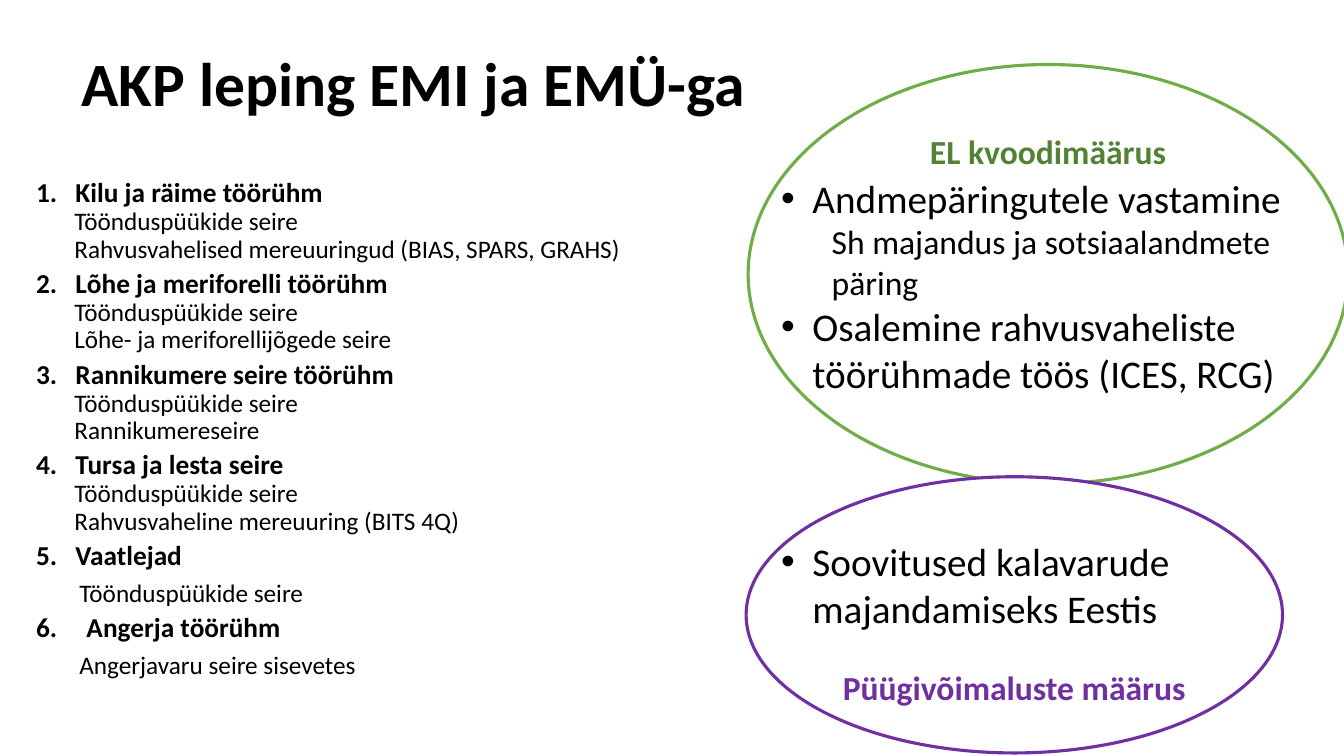
from dataclasses import dataclass

from pptx import Presentation
from pptx import util as u
from pptx.dml.color import RGBColor
from pptx.enum import shapes, text
from pptx.oxml.ns import qn
from lxml import etree


@dataclass(frozen=True)
class Theme:
    font: str = "Calibri"
    black: str = "000000"
    white: str = "FFFFFF"
    green: str = "70AD47"
    dark_green: str = "548235"
    purple: str = "7030A0"
    title: float = 44
    point: float = 28
    label: float = 24
    group: float = 19.5
    task: float = 18


T = Theme()
WIDTH, HEIGHT = 13.33, 7.5

# Work groups: heading, tasks, heading indent, task indent, space before a task
GROUPS = [
    ("Kilu ja räime töörühm",
     ["Töönduspüükide seire", "Rahvusvahelised mereuuringud (BIAS, SPARS, GRAHS)"], 0.39, 0.38, 4.6),
    ("Lõhe ja meriforelli töörühm",
     ["Töönduspüükide seire", "Lõhe- ja meriforellijõgede seire"], 0.39, 0.38, 4.6),
    ("Rannikumere seire töörühm",
     ["Töönduspüükide seire", "Rannikumereseire"], 0.39, 0.38, 4.6),
    ("Tursa ja lesta seire",
     ["Töönduspüükide seire", "Rahvusvaheline mereuuring (BITS 4Q)"], 0.39, 0.38, 4.6),
    ("Vaatlejad", ["Töönduspüükide seire"], 0.39, 0.43, 11),
    ("Angerja töörühm", ["Angerjavaru seire sisevetes"], 0.5, 0.43, 11),
]

# Duties: text, bulleted, space before
DUTIES = [
    ("Andmepäringutele vastamine", True, 0),
    ("Sh majandus ja sotsiaalandmete päring", False, 0),
    ("Osalemine rahvusvaheliste töörühmade töös (ICES, RCG)", True, 0),
    ("Soovitused kalavarude majandamiseks Eestis", True, 101),
]


def share(left, top, width, height):
    """Box in inches from percentages of the slide's size."""
    return [u.Inches(round(part * side / 100, 2))
            for part, side in zip((left, top, width, height), (WIDTH, HEIGHT) * 2)]


def style(p, size, color=T.black, bold=False):
    for r in p.runs:
        r.font.name, r.font.size, r.font.bold = T.font, u.Pt(size), bold
        r.font.color.rgb = RGBColor.from_string(color)


def indent(p, left, hanging=0):
    pPr = p._p.get_or_add_pPr()
    pPr.set("marL", str(u.Inches(left)))
    pPr.set("indent", str(-u.Inches(hanging)))
    return pPr


def mark(pPr, tag, **attributes):
    etree.SubElement(pPr, qn(tag), attributes)


def paragraphs(tf, count):
    return [tf.paragraphs[0]] + [tf.add_paragraph() for _ in range(count - 1)]


def text_box(s, box):
    tf = s.shapes.add_textbox(*box).text_frame
    tf.word_wrap = True
    return tf


def add_title(s, box, words):
    sp = s.shapes.title
    sp.left, sp.top, sp.width, sp.height = box
    tf = sp.text_frame
    tf.text = words
    tf.vertical_anchor = text.MSO_ANCHOR.MIDDLE
    p = tf.paragraphs[0]
    p.alignment, p.line_spacing = text.PP_ALIGN.LEFT, 0.9
    style(p, T.title, bold=True)


def add_groups(s, box):
    rows = []
    for number, (heading, tasks, hang, left, before) in enumerate(GROUPS, 1):
        rows.append((heading, number, hang, hang, 9))
        rows += [(task, None, left, 0, before) for task in tasks]
    tf = text_box(s, box)
    for p, (words, number, left, hang, before) in zip(paragraphs(tf, len(rows)), rows):
        p.text = words
        p.line_spacing, p.space_before = 0.7, u.Pt(before)
        pPr = indent(p, left, hang)
        if number:
            mark(pPr, "a:buFont", typeface="+mj-lt")
            mark(pPr, "a:buAutoNum", type="arabicPeriod", startAt=str(number))
        else:
            mark(pPr, "a:buNone")
        style(p, T.group if number else T.task, bold=bool(number))


def add_regulation(s, box, words, line, color, anchor):
    sp = s.shapes.add_shape(shapes.MSO_SHAPE.OVAL, *box)
    sp.shadow.inherit = False
    sp.fill.solid()
    sp.fill.fore_color.rgb = RGBColor.from_string(T.white)
    sp.line.color.rgb = RGBColor.from_string(line)
    sp.line.width = u.Pt(2.25)
    tf = sp.text_frame
    tf.text = words
    tf.word_wrap, tf.vertical_anchor = True, anchor
    p = tf.paragraphs[0]
    p.alignment = text.PP_ALIGN.CENTER
    style(p, T.label, color, bold=True)


def add_duties(s, box):
    tf = text_box(s, box)
    for p, (words, bulleted, before) in zip(paragraphs(tf, len(DUTIES)), DUTIES):
        p.text = words
        p.space_before = u.Pt(before)
        if bulleted:
            pPr = indent(p, 0.31, 0.31)
            mark(pPr, "a:buFont", typeface="Arial")
            mark(pPr, "a:buChar", char="•")
        else:
            indent(p, 0.5)
        style(p, T.point if bulleted else T.label)


def main():
    prs = Presentation()
    prs.slide_width, prs.slide_height = u.Inches(WIDTH), u.Inches(HEIGHT)
    s = prs.slides.add_slide(prs.slide_layouts[5])

    # Title and numbered work groups on the left
    add_title(s, share(5.3, 3.2, 85.2, 16.4), "AKP leping EMI ja EMÜ-ga")
    add_groups(s, share(1.95, 23.73, 59.5, 73))

    # Regulations as ovals on the right, with the duties over them
    add_regulation(s, share(55.66, 8.53, 44.64, 55.47), "EL kvoodimäärus",
                   T.green, T.dark_green, text.MSO_ANCHOR.TOP)
    add_regulation(s, share(55.51, 63.07, 39.91, 36.53), "Püügivõimaluste määrus",
                   T.purple, T.purple, text.MSO_ANCHOR.BOTTOM)
    add_duties(s, share(57.39, 22.4, 42.61, 62.4))

    prs.save("out.pptx")


if __name__ == "__main__":
    main()
